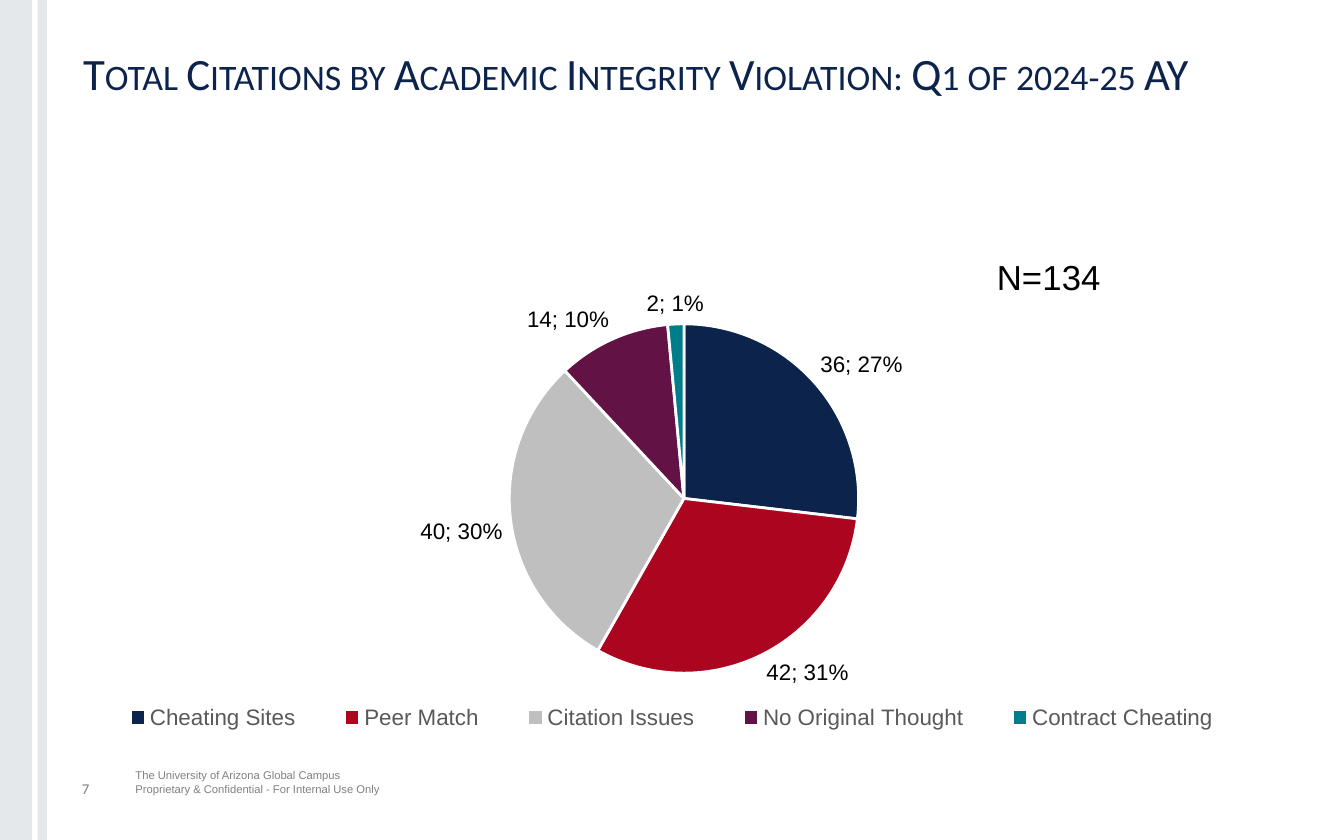
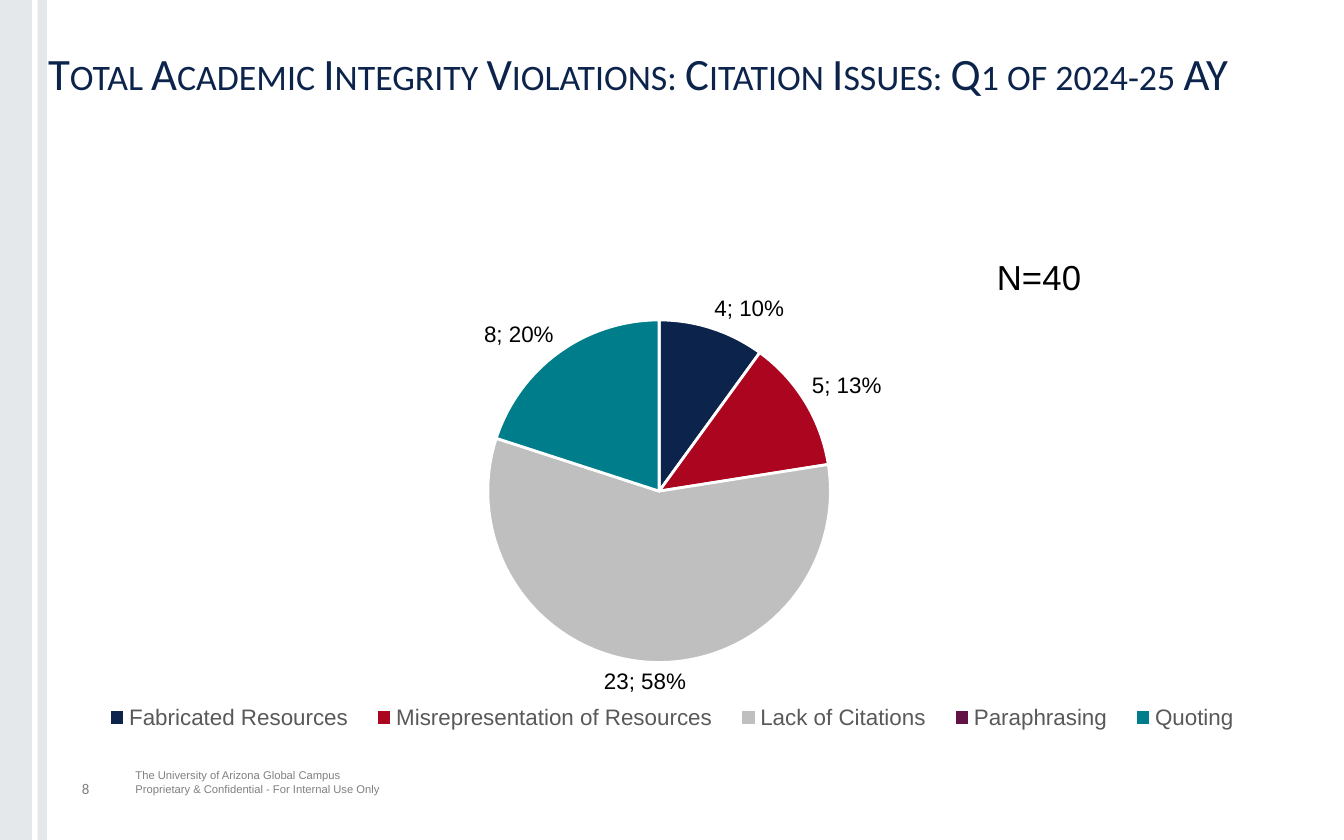
from dataclasses import dataclass

from lxml import etree
from pptx import Presentation
from pptx.chart.data import CategoryChartData
from pptx.dml.color import RGBColor
from pptx.enum.chart import XL_CHART_TYPE, XL_LABEL_POSITION, XL_LEGEND_POSITION
from pptx.enum.shapes import MSO_SHAPE
from pptx.enum.text import MSO_ANCHOR
from pptx.oxml.ns import qn
from pptx.util import Inches, Pt

PIE = XL_CHART_TYPE.PIE
OUTSIDE_END = XL_LABEL_POSITION.OUTSIDE_END
LEGEND_BOTTOM = XL_LEGEND_POSITION.BOTTOM
RECTANGLE = MSO_SHAPE.RECTANGLE
MIDDLE, BOTTOM = MSO_ANCHOR.MIDDLE, MSO_ANCHOR.BOTTOM


def text_style(name, size, color):
    return {"name": name, "size": Pt(size), "color": RGBColor.from_string(color)}


@dataclass(frozen=True)
class Theme:
    title = text_style("Calibri", 24, "0C234B")
    number = text_style("Calibri", 8, "808080")
    footer = text_style("Arial", 6, "808080")
    chart = text_style("Arial", 10, "000000")
    total = text_style("Arial", 18.6, "000000")
    label = text_style("Arial", 12, "000000")
    legend = text_style("Arial", 12, "595959")
    white = RGBColor.from_string("FFFFFF")
    band = RGBColor.from_string("98A4AE")
    band_opacity = 25
    slices = [RGBColor.from_string(color)
              for color in ("0C234B", "AB0520", "BFBFBF", "621244", "007D8A")]
    slice_border = Pt(1.5)


THEME = Theme()

# Boxes are left, top, width, height in inches.
SLIDE_SIZE = (10, 6.25)
BAND_BOX = (0, 0, 0.35, 6.25)
STRIPE_BOX = (0.24, 0, 0.04, 6.25)
FOOTER_BOX = (0.91, 5.67, 2.06, 0.25)
NUMBER_BOX = (0.51, 5.68, 0.51, 0.25)
CHART_BOX = (0.5, 1.45, 9.01, 4.19)
# These two are measured from the chart's top left corner.
LEGEND_BOX = (0.16, 3.72, 8.68, 0.34)
TOTAL_BOX = (6.87, 0.39)

FOOTER = ("The University of Arizona Global Campus\n"
          "Proprietary & Confidential - For Internal Use Only")

SLIDES = [
    {
        "number": 7,
        "title": "Total Citations by Academic Integrity Violation: Q1 of 2024-25 AY",
        "title_box": (0.52, 0.34, 8.99, 0.4),
        "pie_box": (3.29, 0.96, 2.6, 2.6),
        "counts": {
            "Cheating Sites": 36,
            "Peer Match": 42,
            "Citation Issues": 40,
            "No Original Thought": 14,
            "Contract Cheating": 2,
        },
    },
    {
        "number": 8,
        "title": "Total Academic Integrity Violations: Citation Issues: Q1 of 2024-25 AY",
        "title_box": (0.26, 0.34, 9.53, 0.4),
        "pie_box": (3.13, 0.93, 2.55, 2.55),
        "counts": {
            "Fabricated Resources": 4,
            "Misrepresentation of Resources": 5,
            "Lack of Citations": 23,
            "Paraphrasing": 0,
            "Quoting": 8,
        },
    },
]


def set_attributes(target, values):
    for name, value in values.items():
        setattr(target, name, value)


def set_font(font, style):
    set_attributes(font, {"name": style["name"], "size": style["size"], "bold": False})
    font.color.rgb = style["color"]


def to_inches(box):
    return [Inches(length) for length in box]


def add_text(slide, box, text, style, anchor, insets):
    frame = slide.shapes.add_textbox(*to_inches(box)).text_frame
    sides = ("margin_left", "margin_top", "margin_right", "margin_bottom")
    set_attributes(frame, {"word_wrap": True, "vertical_anchor": anchor})
    set_attributes(frame, dict(zip(sides, to_inches(insets))))
    paragraph = frame.paragraphs[0]
    paragraph.text = text
    for run in paragraph.runs:
        set_font(run.font, style)
    return paragraph


def add_band(slide, box, color, opacity=100):
    shape = slide.shapes.add_shape(RECTANGLE, *to_inches(box))
    shape.shadow.inherit = False
    shape.line.fill.background()
    shape.fill.solid()
    shape.fill.fore_color.rgb = color
    if opacity < 100:
        fill_color = shape._element.spPr.find(f".//{qn('a:srgbClr')}")
        etree.SubElement(fill_color, qn("a:alpha"), val=str(opacity * 1000))


def add_frame(slide, number):
    """Draw what every slide shares: side bands, footer and slide number."""
    add_band(slide, BAND_BOX, THEME.band, THEME.band_opacity)
    add_band(slide, STRIPE_BOX, THEME.white)
    insets = (0.1, 0, 0, 0)
    add_text(slide, FOOTER_BOX, FOOTER, THEME.footer, BOTTOM, insets)
    add_text(slide, NUMBER_BOX, str(number), THEME.number, BOTTOM, insets)


def add_title(slide, box, text):
    paragraph = add_text(slide, box, text, THEME.title, MIDDLE, (0.1,) * 4)
    for run in paragraph.runs:
        run.font._element.set("cap", "small")


def place_in_chart(parent, index, box, chart_box, inner=False):
    """Give a chart part a manual layout, from a box in inches within the chart."""
    for old_layout in parent.findall(qn("c:layout")):
        parent.remove(old_layout)
    layout = etree.Element(qn("c:layout"))
    parent.insert(index, layout)
    manual = etree.SubElement(layout, qn("c:manualLayout"))
    if inner:
        etree.SubElement(manual, qn("c:layoutTarget"), val="inner")
    for side in "xy":
        etree.SubElement(manual, qn(f"c:{side}Mode"), val="edge")
    for side, length, whole in zip("xywh", box, chart_box[2:] * 2):
        etree.SubElement(manual, qn(f"c:{side}"), val=f"{length / whole:.4f}")


def style_slices(series):
    for index, color in enumerate(THEME.slices):
        slice_format = series.points[index].format
        slice_format.fill.solid()
        slice_format.fill.fore_color.rgb = color
        slice_format.line.color.rgb = THEME.white
        slice_format.line.width = THEME.slice_border


def add_slice_labels(series):
    """Label slices with count and share, leaving empty slices unlabelled."""
    labels = series.data_labels
    set_attributes(labels, {"show_value": True, "show_percentage": True,
                            "position": OUTSIDE_END})
    set_font(labels.font, THEME.label)
    element = labels._element
    separator = etree.Element(qn("c:separator"))
    separator.text = "; "
    element.find(qn("c:showBubbleSize")).addnext(separator)
    empty = [index for index, value in enumerate(series.values) if value == 0]
    for position, index in enumerate(empty):
        label = etree.Element(qn("c:dLbl"))
        etree.SubElement(label, qn("c:idx"), val=str(index))
        etree.SubElement(label, qn("c:delete"), val="1")
        element.insert(position, label)


def add_total(chart, total, chart_box):
    chart.has_title = True
    title = chart.chart_title
    paragraph = title.text_frame.paragraphs[0]
    paragraph.text = f"N={total}"
    set_font(paragraph.runs[0].font, THEME.total)
    place_in_chart(title._element, 1, TOTAL_BOX, chart_box)
    title._element.find(qn("c:overlay")).set("val", "1")


def add_legend(chart, chart_box):
    chart.has_legend = True
    legend = chart.legend
    set_attributes(legend, {"position": LEGEND_BOTTOM, "include_in_layout": False})
    set_font(legend.font, THEME.legend)
    place_in_chart(legend._element, 1, LEGEND_BOX, chart_box)


def add_pie(slide, box, pie_box, counts):
    data = CategoryChartData()
    data.categories = list(counts)
    data.add_series("Series 1", list(counts.values()))
    chart = slide.shapes.add_chart(PIE, *to_inches(box), data).chart
    set_font(chart.font, THEME.chart)
    plot = chart.plots[0]
    plot.vary_by_categories = True
    style_slices(plot.series[0])
    add_slice_labels(plot.series[0])
    add_total(chart, sum(counts.values()), box)
    add_legend(chart, box)
    place_in_chart(plot._element.getparent(), 0, pie_box, box, inner=True)


def add_pie_slide(presentation, content):
    slide = presentation.slides.add_slide(presentation.slide_layouts[6])
    add_frame(slide, content["number"])
    add_title(slide, content["title_box"], content["title"])
    add_pie(slide, CHART_BOX, content["pie_box"], content["counts"])


def main():
    presentation = Presentation()
    presentation.slide_width, presentation.slide_height = to_inches(SLIDE_SIZE)
    for content in SLIDES:
        add_pie_slide(presentation, content)
    presentation.save("out.pptx")


if __name__ == "__main__":
    main()
